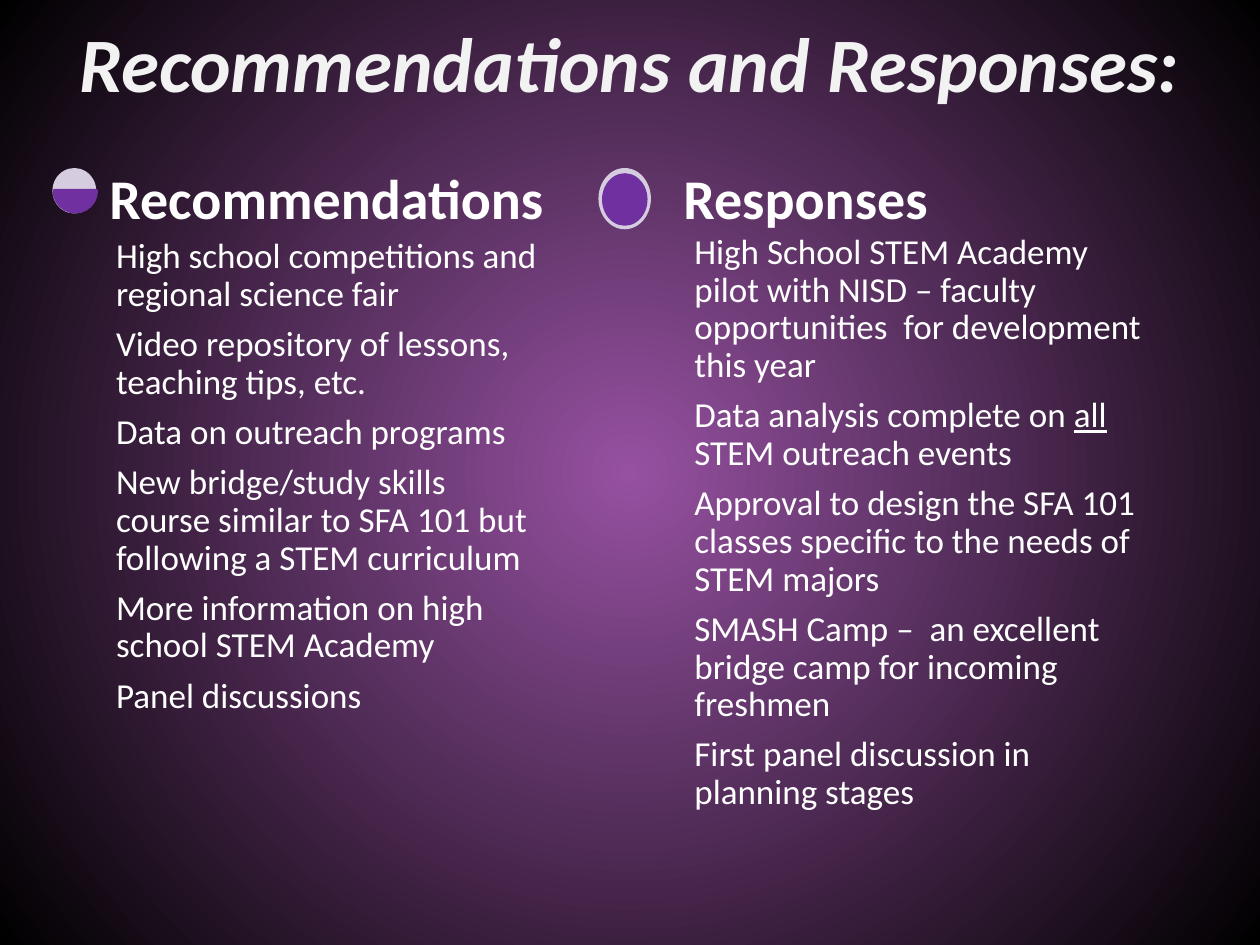
import pptx
import pptx.dml.color
import pptx.enum.shapes
import pptx.enum.text
import pptx.util
from lxml import etree

Pt = pptx.util.Pt
Shape = pptx.enum.shapes.MSO_SHAPE
Anchor = pptx.enum.text.MSO_ANCHOR

WHITE, TITLE_GREY = "FFFFFF", "F2F2F2"
PURPLE, LILAC = "7030A0", "D5CDDF"
GLOW, BLACK = "9651A1", "000000"

RECOMMENDATIONS = [
    "High school competitions and regional science fair",
    "Video repository of lessons, teaching tips, etc.",
    "Data on outreach programs",
    "New bridge/study skills course similar to SFA 101 but following a STEM curriculum",
    "More information on high school STEM Academy",
    "Panel discussions",
]
# An item given as a tuple has its middle part underlined.
RESPONSES = [
    "High School STEM Academy pilot with NISD – faculty opportunities  for development this year",
    ("Data analysis complete on ", "all", " STEM outreach events"),
    "Approval to design the SFA 101 classes specific to the needs of STEM majors",
    "SMASH Camp –  an excellent bridge camp for incoming freshmen",
    "First panel discussion in planning stages",
]


def rgb(value):
    return pptx.dml.color.RGBColor.from_string(value)


class SlideBuilder:
    font_name = "Calibri"

    def __init__(self, slide):
        self.slide = slide

    def style(self, paragraph, size, color, bold=False, italic=False):
        font = paragraph.font
        font.name, font.size = self.font_name, Pt(size)
        font.bold, font.italic = bold, italic
        font.color.rgb = rgb(color)

    def radial_background(self, center, edge):
        fill = self.slide.background.fill
        fill.gradient()
        for stop, color in zip(fill.gradient_stops, (center, edge)):
            stop.color.rgb = rgb(color)
        linear = next(self.slide.element.iter("{*}lin"))
        namespace = etree.QName(linear).namespace
        radial = etree.Element(f"{{{namespace}}}path", {"path": "circle"})
        etree.SubElement(radial, f"{{{namespace}}}fillToRect",
                         {side: "50000" for side in "ltrb"})
        linear.getparent().replace(linear, radial)

    def title(self, text, left, top, width, height):
        shape = self.slide.shapes.title
        shape.left, shape.top = Pt(left), Pt(top)
        shape.width, shape.height = Pt(width), Pt(height)
        frame = shape.text_frame
        frame.text = text
        frame.vertical_anchor = Anchor.MIDDLE
        paragraph = frame.paragraphs[0]
        paragraph.alignment = pptx.enum.text.PP_ALIGN.CENTER
        self.style(paragraph, 44, TITLE_GREY, bold=True, italic=True)

    def marker(self, kind, left, top, width, height, color, outline=None, angles=()):
        shape = self.slide.shapes.add_shape(kind, Pt(left), Pt(top), Pt(width), Pt(height))
        shape.shadow.inherit = False
        for index, angle in enumerate(angles):
            shape.adjustments[index] = angle
        shape.fill.solid()
        shape.fill.fore_color.rgb = rgb(color)
        if outline:
            shape.line.color.rgb = rgb(outline)
            shape.line.width = Pt(2)
        else:
            shape.line.fill.background()

    def text(self, items, left, top, width, height, size, inset, anchor=Anchor.TOP, bold=False):
        box = self.slide.shapes.add_textbox(Pt(left), Pt(top), Pt(width), Pt(height))
        frame = box.text_frame
        frame.word_wrap = True
        frame.vertical_anchor = anchor
        frame.margin_left = frame.margin_right = Pt(inset)
        frame.margin_top = frame.margin_bottom = Pt(inset)
        for index, item in enumerate(items):
            paragraph = frame.add_paragraph() if index else frame.paragraphs[0]
            paragraph.line_spacing = 0.9
            paragraph.space_after = Pt(size * 0.35)
            self.style(paragraph, size, WHITE, bold=bold)
            parts = (item,) if isinstance(item, str) else item
            for position, part in enumerate(parts):
                run = paragraph.add_run()
                run.text = part
                if position == 1:
                    run.font.underline = True

    def heading(self, text, left, width):
        self.text([text], left, 100, width, 39, 32, 6.5, Anchor.BOTTOM, bold=True)

    def body(self, items, left, top, width, height):
        self.text(items, left, top, width, height, 20, 4.3)


def main():
    presentation = pptx.Presentation()
    presentation.slide_width, presentation.slide_height = Pt(720), Pt(540)
    builder = SlideBuilder(presentation.slides.add_slide(presentation.slide_layouts[5]))
    builder.radial_background(GLOW, BLACK)
    builder.title("Recommendations and Responses:", 30, 5, 660, 60)

    builder.marker(Shape.OVAL, 30, 96, 25, 26, LILAC)
    builder.marker(Shape.CHORD, 31, 97, 24, 24, PURPLE, PURPLE, angles=(0, 108))
    builder.body(RECOMMENDATIONS, 62, 132, 250.5, 355)
    builder.heading("Recommendations", 56, 297)

    builder.marker(Shape.OVAL, 342, 96, 30, 35, LILAC)
    builder.marker(Shape.OVAL, 345, 100, 24, 28, PURPLE, PURPLE)
    builder.body(RESPONSES, 392.5, 129.5, 273.5, 374.5)
    builder.heading("Responses", 384, 227)

    presentation.save("out.pptx")


if __name__ == "__main__":
    main()
